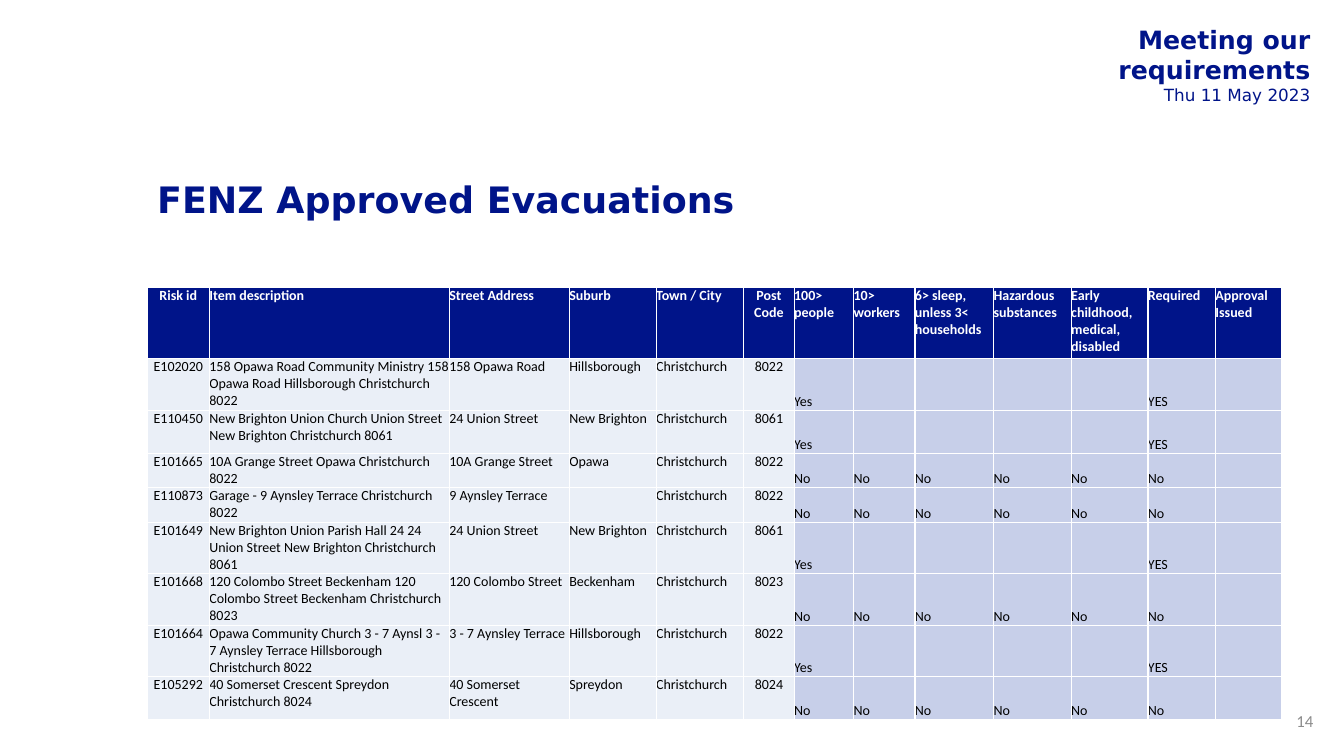
from lxml import etree
from pptx import Presentation
from pptx.dml.color import RGBColor
from pptx.enum.text import MSO_ANCHOR, PP_ALIGN
from pptx.oxml.ns import qn
from pptx.util import Pt

LEFT, CENTER, RIGHT = PP_ALIGN.LEFT, PP_ALIGN.CENTER, PP_ALIGN.RIGHT
TOP, MIDDLE, BOTTOM = MSO_ANCHOR.TOP, MSO_ANCHOR.MIDDLE, MSO_ANCHOR.BOTTOM

NAVY = RGBColor(0x00, 0x14, 0x89)
WHITE = RGBColor(0xFF, 0xFF, 0xFF)
BLACK = RGBColor(0x00, 0x00, 0x00)
GREY = RGBColor(0x8C, 0x8C, 0x8C)
PALE = RGBColor(0xEA, 0xEF, 0xF7)
LILAC = RGBColor(0xC7, 0xCF, 0xE9)

HEADING = {"name": "DejaVu Sans", "size": Pt(18), "bold": True, "color": NAVY}
DATE = {**HEADING, "size": Pt(12), "bold": False}
TITLE = {**HEADING, "size": Pt(26)}
NUMBER = {"name": "Calibri", "size": Pt(12), "bold": False, "color": GREY}
TABLE_HEAD = {"name": "Calibri", "size": Pt(10), "bold": True, "color": WHITE}
TABLE_BODY = {**TABLE_HEAD, "bold": False, "color": BLACK}

COLUMNS = [
    ("Risk id", 44.5), ("Item description", 171.4), ("Street Address", 85.7),
    ("Suburb", 62), ("Town / City", 62.6), ("Post Code", 36),
    ("100> people", 42.5), ("10> workers", 43.8),
    ("6> sleep, unless 3< households", 56.2), ("Hazardous substances", 55.5),
    ("Early childhood, medical, disabled", 54.8), ("Required", 48.2),
    ("Approval Issued", 47.5),
]
CENTERED_COLUMNS = (0, 5)
FIRST_CHECK = 6
HEAD_HEIGHT = 51
CITY = "Christchurch"
REQUIRED = ["Yes", "", "", "", "", "YES", ""]
NOT_REQUIRED = ["No"] * 6 + [""]
BUILDINGS = [
    (36.8, "E102020", "158 Opawa Road Community Ministry 158 Opawa Road Hillsborough Christchurch 8022",
     "158 Opawa Road", "Hillsborough", "8022", REQUIRED),
    (30.8, "E110450", "New Brighton Union Church Union Street New Brighton Christchurch 8061",
     "24 Union Street", "New Brighton", "8061", REQUIRED),
    (24.6, "E101665", "10A Grange Street Opawa Christchurch 8022",
     "10A Grange Street", "Opawa", "8022", NOT_REQUIRED),
    (24.6, "E110873", "Garage - 9 Aynsley Terrace Christchurch 8022",
     "9 Aynsley Terrace", "", "8022", NOT_REQUIRED),
    (36.8, "E101649", "New Brighton Union Parish Hall 24 24 Union Street New Brighton Christchurch 8061",
     "24 Union Street", "New Brighton", "8061", REQUIRED),
    (36.8, "E101668", "120 Colombo Street Beckenham 120 Colombo Street Beckenham Christchurch 8023",
     "120 Colombo Street", "Beckenham", "8023", NOT_REQUIRED),
    (36.8, "E101664", "Opawa Community Church 3 - 7 Aynsl 3 - 7 Aynsley Terrace Hillsborough Christchurch 8022",
     "3 - 7 Aynsley Terrace", "Hillsborough", "8022", REQUIRED),
    (30.8, "E105292", "40 Somerset Crescent Spreydon Christchurch 8024",
     "40 Somerset Crescent", "Spreydon", "8024", NOT_REQUIRED),
]


def write(paragraph, text, style, alignment=LEFT):
    paragraph.text = text
    paragraph.alignment = alignment
    for font in [paragraph.font] + [run.font for run in paragraph.runs]:
        for attribute, value in style.items():
            if attribute == "color":
                font.color.rgb = value
            else:
                setattr(font, attribute, value)


def add_text_box(slide, box, lines, frame_format):
    shape = slide.shapes.add_textbox(*map(Pt, box))
    frame = shape.text_frame
    frame.word_wrap = True
    for attribute, value in frame_format.items():
        setattr(frame, attribute, value)
    for index, (text, style) in enumerate(lines):
        paragraph = frame.add_paragraph() if index else frame.paragraphs[0]
        write(paragraph, text, style, RIGHT)


def add_meeting_heading(slide, box):
    lines = [("Meeting our requirements", HEADING), ("Thu 11 May 2023", DATE)]
    margins = {"margin_left": Pt(14), "margin_right": Pt(5),
               "margin_top": Pt(3), "margin_bottom": Pt(3)}
    add_text_box(slide, box, lines, margins)


def add_title(slide, box):
    title = slide.shapes.title
    for attribute, value in zip(("left", "top", "width", "height"), box):
        setattr(title, attribute, Pt(value))
    title.text_frame.vertical_anchor = MIDDLE
    paragraph = title.text_frame.paragraphs[0]
    write(paragraph, "FENZ Approved Evacuations", TITLE)
    paragraph.line_spacing = 0.9


def add_borders(cell):
    properties = cell._tc.get_or_add_tcPr()
    for position, side in enumerate(("lnL", "lnR", "lnT", "lnB")):
        line = etree.Element(qn(f"a:{side}"), w=str(Pt(1)))
        fill = etree.SubElement(line, qn("a:solidFill"))
        etree.SubElement(fill, qn("a:srgbClr"), val=str(WHITE))
        properties.insert(position, line)


def fill_cell(cell, text, column, style, color, anchor):
    for side in ("left", "right", "top", "bottom"):
        setattr(cell, f"margin_{side}", 0)
    cell.vertical_anchor = anchor
    cell.fill.solid()
    cell.fill.fore_color.rgb = color
    alignment = CENTER if column in CENTERED_COLUMNS else LEFT
    write(cell.text_frame.paragraphs[0], text, style, alignment)
    add_borders(cell)


def add_evacuation_table(slide, box):
    frame = slide.shapes.add_table(len(BUILDINGS) + 1, len(COLUMNS), *map(Pt, box))
    table = frame.table
    table.horz_banding = False
    table.rows[0].height = Pt(HEAD_HEIGHT)
    for column, (name, width) in enumerate(COLUMNS):
        table.columns[column].width = Pt(width)
        fill_cell(table.cell(0, column), name, column, TABLE_HEAD, NAVY, TOP)
    for row, building in enumerate(BUILDINGS, 1):
        height, risk, item, street, suburb, code, checks = building
        table.rows[row].height = Pt(height)
        for column, text in enumerate([risk, item, street, suburb, CITY, code] + checks):
            color, anchor = (PALE, TOP) if column < FIRST_CHECK else (LILAC, BOTTOM)
            fill_cell(table.cell(row, column), text, column, TABLE_BODY, color, anchor)


def add_slide_number(slide, box):
    add_text_box(slide, box, [("14", NUMBER)], {"vertical_anchor": MIDDLE})


def main():
    presentation = Presentation()
    presentation.slide_width, presentation.slide_height = Pt(960), Pt(540)
    slide = presentation.slides.add_slide(presentation.slide_layouts[5])
    add_meeting_heading(slide, (663.8, 14.4, 277.2, 63.4))
    add_title(slide, (105.1, 108, 806.4, 72.7))
    add_evacuation_table(slide, (105.1, 205.2, 810, 309))
    add_slide_number(slide, (915.1, 500.4, 30.2, 28.8))
    presentation.save("out.pptx")


if __name__ == "__main__":
    main()
